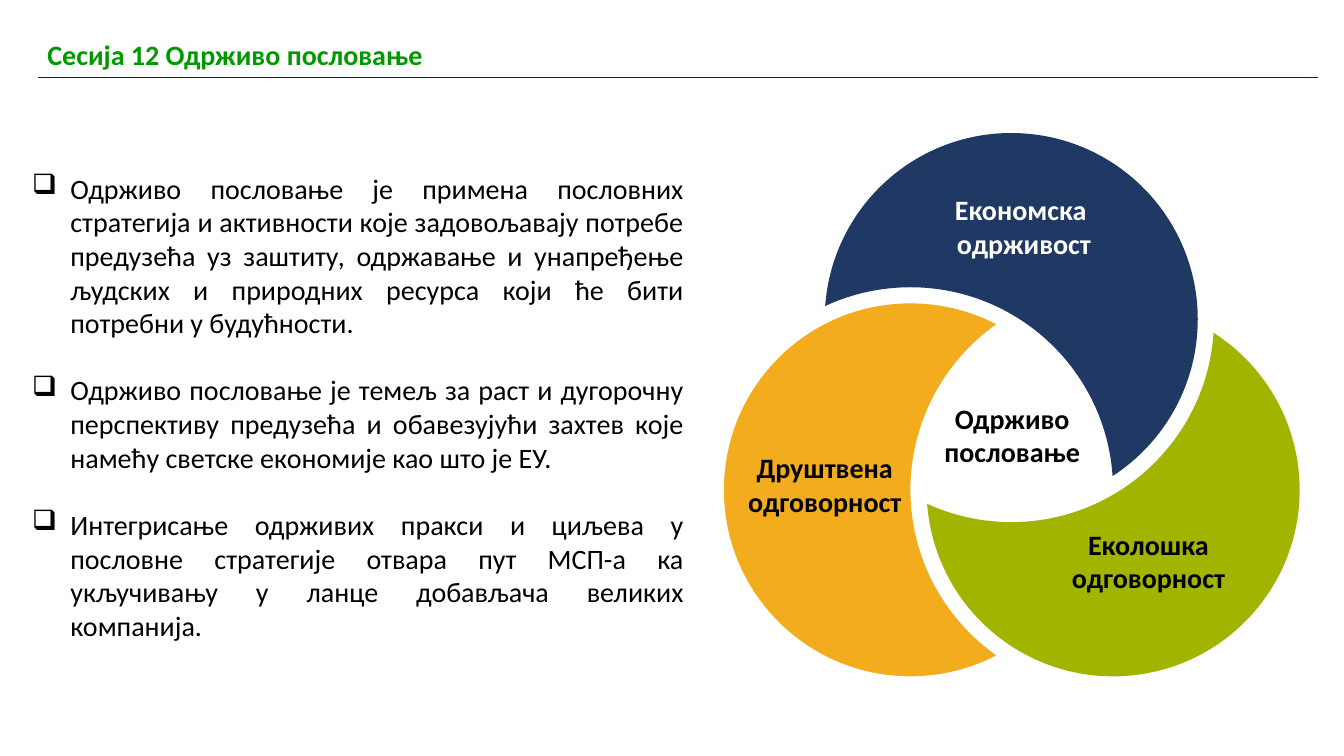
import math

import lxml.etree
import pptx
import pptx.dml.color
import pptx.enum.text
import pptx.oxml.ns
import pptx.util

Inches = pptx.util.Inches
RGBColor = pptx.dml.color.RGBColor
Align = pptx.enum.text.PP_ALIGN
Anchor = pptx.enum.text.MSO_ANCHOR
qn = pptx.oxml.ns.qn

GREEN = RGBColor(0x00, 0x99, 0x00)
NAVY = RGBColor(0x20, 0x38, 0x64)
RULE = RGBColor(0x00, 0x20, 0x60)
AMBER = RGBColor(0xF3, 0xAC, 0x1E)
LIME = RGBColor(0xA1, 0xB4, 0x00)
BLACK = RGBColor(0x00, 0x00, 0x00)
WHITE = RGBColor(0xFF, 0xFF, 0xFF)

FONT = "Calibri"
TEXT_SIZE = pptx.util.Pt(20)
TITLE = "Сесија 12 Одрживо пословање"
POINTS = [
    "Одрживо пословање је примена пословних стратегија и активности које "
    "задовољавају потребе предузећа уз заштиту, одржавање и унапређење људских "
    "и природних ресурса који ће бити потребни у будућности.",
    "Одрживо пословање је темељ за раст и дугорочну перспективу предузећа и "
    "обавезујући захтев које намећу светске економије као што је ЕУ.",
    "Интегрисање одрживих пракси и циљева у пословне стратегије отвара пут "
    "МСП-а ка укључивању у ланце добављача великих компанија.",
]

PETAL_RADIUS = 1.85
CUT_RADIUS = 2.01
CENTRES = {"left": (1.88, 3.54), "right": (3.89, 3.54), "top": (2.88, 1.85)}
PETALS = [("left", "right", AMBER), ("right", "top", LIME), ("top", "left", NAVY)]
LABELS = [
    ((3.03, 3.71, 2.42, 1.07), ["Еколошка одговорност"], BLACK, Anchor.MIDDLE),
    ((1.65, 0.53, 2.71, 0.79), ["Економска ", "одрживост"], WHITE, Anchor.MIDDLE),
    ((0, 2.74, 2.06, 1.49), ["Друштвена одговорност"], BLACK, Anchor.MIDDLE),
    ((2.04, 2.61, 1.7, 0.87), ["Одрживо пословање"], BLACK, Anchor.TOP),
]


def add_span(para, words, colour, bold=False):
    span = para.add_run()
    span.text = words
    span.font.name = FONT
    span.font.size = TEXT_SIZE
    span.font.bold = bold
    span.font.color.rgb = colour


def add_paras(frame, texts, colour, alignment, bold=False):
    frame.word_wrap = True
    for index, words in enumerate(texts):
        para = frame.add_paragraph() if index else frame.paragraphs[0]
        para.alignment = alignment
        add_span(para, words, colour, bold)


def set_border(cell, side, colour):
    props = cell._tc.get_or_add_tcPr()
    line = lxml.etree.Element(qn("a:" + side), w=str(pptx.util.Pt(1)))
    fill = lxml.etree.SubElement(line, qn("a:solidFill"))
    lxml.etree.SubElement(fill, qn("a:srgbClr"), val=str(colour))
    props.append(line)


def add_header(page, left, top, width, height):
    table = page.shapes.add_table(
        1, 1, Inches(left), Inches(top), Inches(width), Inches(height)
    ).table
    table.first_row = False
    table.horz_banding = False
    cell = table.cell(0, 0)
    for side in ("lnL", "lnR", "lnT"):
        set_border(cell, side, WHITE)
    set_border(cell, "lnB", RULE)
    cell.fill.background()
    add_span(cell.text_frame.paragraphs[0], TITLE, GREEN, bold=True)


def add_points(page, left, top, width, height):
    box = page.shapes.add_textbox(
        Inches(left), Inches(top), Inches(width), Inches(height)
    )
    add_paras(box.text_frame, POINTS, BLACK, Align.JUSTIFY)
    for index, para in enumerate(box.text_frame.paragraphs):
        if index:
            para.space_before = pptx.util.Pt(24)
        props = para._p.get_or_add_pPr()
        props.set("marL", str(Inches(0.38)))
        props.set("indent", str(-Inches(0.38)))
        lxml.etree.SubElement(props, qn("a:buFont"), typeface="Wingdings")
        lxml.etree.SubElement(props, qn("a:buChar"), char="q")


def arc_curves(centre, radius, start, end):
    quarter = math.pi / 2
    low, high = sorted((start, end))
    turns = range(math.floor(low / quarter) + 1, math.ceil(high / quarter))
    angles = sorted([low, high, *(turn * quarter for turn in turns)], reverse=start > end)

    def spot(angle, pull):
        return (
            centre[0] + radius * (math.cos(angle) - pull * math.sin(angle)),
            centre[1] + radius * (math.sin(angle) + pull * math.cos(angle)),
        )

    for first, last in zip(angles, angles[1:]):
        pull = 4 / 3 * math.tan((last - first) / 4)
        yield spot(first, 0), spot(first, pull), spot(last, -pull), spot(last, 0)


def petal_curves(centre, cutter):
    distance = math.dist(centre, cutter)
    heading = math.atan2(cutter[1] - centre[1], cutter[0] - centre[0])
    gap = distance**2 + PETAL_RADIUS**2 - CUT_RADIUS**2
    outer = math.acos(gap / (2 * distance * PETAL_RADIUS))
    gap = distance**2 + CUT_RADIUS**2 - PETAL_RADIUS**2
    inner = math.acos(gap / (2 * distance * CUT_RADIUS))
    back = heading + math.pi
    return [
        *arc_curves(centre, PETAL_RADIUS, heading + outer, heading + math.tau - outer),
        *arc_curves(cutter, CUT_RADIUS, back + inner, back - inner),
    ]


def bend_edges(petal, curves):
    edges = list(petal._element.iter(qn("a:lnTo")))
    for edge, curve in zip(edges, curves):
        bend = lxml.etree.Element(qn("a:cubicBezTo"))
        for x, y in curve[1:]:
            lxml.etree.SubElement(
                bend,
                qn("a:pt"),
                x=str(Inches(x) - petal.left),
                y=str(Inches(y) - petal.top),
            )
        edge.getparent().replace(edge, bend)


def add_petals(group, left, top):
    places = {name: (left + x, top + y) for name, (x, y) in CENTRES.items()}
    for name, cutter, colour in PETALS:
        curves = petal_curves(places[name], places[cutter])
        start_x, start_y = curves[0][0]
        builder = group.shapes.build_freeform(Inches(start_x), Inches(start_y))
        corners = [(Inches(x), Inches(y)) for *_, (x, y) in curves]
        builder.add_line_segments(corners, close=True)
        petal = builder.convert_to_shape()
        bend_edges(petal, curves)
        petal.shadow.inherit = False
        petal.fill.solid()
        petal.fill.fore_color.rgb = colour
        petal.line.fill.background()


def add_diagram(page, left, top):
    group = page.shapes.add_group_shape()
    add_petals(group, left, top)
    for (x, y, width, height), texts, colour, anchor in LABELS:
        box = group.shapes.add_textbox(
            Inches(left + x), Inches(top + y), Inches(width), Inches(height)
        )
        box.text_frame.vertical_anchor = anchor
        add_paras(box.text_frame, texts, colour, Align.CENTER, bold=True)


def main():
    deck = pptx.Presentation()
    deck.slide_width = Inches(13.33)
    deck.slide_height = Inches(7.5)
    page = deck.slides.add_slide(deck.slide_layouts[6])
    add_header(page, 0.37, 0.33, 12.71, 0.43)
    add_points(page, 0.22, 1.65, 6.66, 4.81)
    add_diagram(page, 7.15, 1.32)
    deck.save("out.pptx")


if __name__ == "__main__":
    main()
